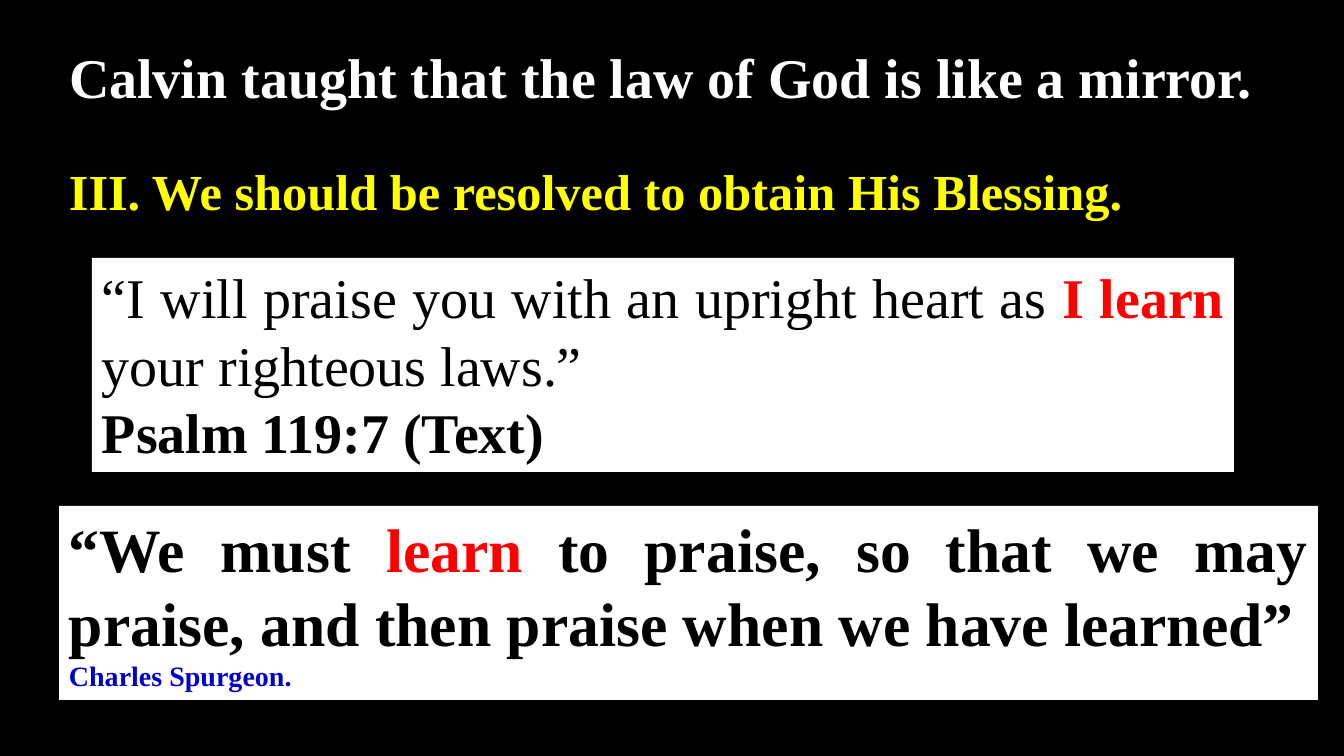
from dataclasses import dataclass

from pptx import Presentation
from pptx.dml.color import RGBColor
from pptx.enum.shapes import MSO_SHAPE
from pptx.enum.text import MSO_ANCHOR, MSO_AUTO_SIZE, PP_ALIGN
from pptx.util import Pt

RECT = MSO_SHAPE.RECTANGLE
TOP = MSO_ANCHOR.TOP
FIXED = MSO_AUTO_SIZE.NONE
LEFT, JUSTIFY = PP_ALIGN.LEFT, PP_ALIGN.JUSTIFY
SCALE = 914400 / 100.8


@dataclass(frozen=True)
class Theme:
    font: str = "Times New Roman"
    black: str = "000000"
    white: str = "FFFFFF"
    yellow: str = "FFFF00"
    red: str = "FF0000"
    blue: str = "0000CC"
    title: int = 40
    point: int = 36
    verse: int = 40
    quote: int = 44
    credit: int = 20


THEME = Theme()


def px(*sizes):
    return [round(size * SCALE) for size in sizes]


def paint(fill, color):
    fill.solid()
    fill.fore_color.rgb = RGBColor.from_string(color)


def write(shape, lines, align, wrap):
    """Fill a shape with lines, each a list of (text, size, color, bold)."""
    frame = shape.text_frame
    look = {"word_wrap": wrap, "auto_size": FIXED, "vertical_anchor": TOP}
    for name, value in look.items():
        setattr(frame, name, value)
    for index, line in enumerate(lines):
        para = frame.add_paragraph() if index else frame.paragraphs[0]
        para.alignment = align
        for text, size, color, bold in line:
            run = para.add_run()
            run.text = text
            form = {"name": THEME.font, "size": Pt(size), "bold": bold}
            for name, value in form.items():
                setattr(run.font, name, value)
            run.font.color.rgb = RGBColor.from_string(color)


def add_title(slide, box, text):
    title = slide.shapes.title
    for name, value in zip(("left", "top", "width", "height"), px(*box)):
        setattr(title, name, value)
    write(title, [[(text, THEME.title, THEME.white, True)]], LEFT, False)


def add_point(slide, box, text):
    point = slide.shapes.add_textbox(*px(*box))
    write(point, [[(text, THEME.point, THEME.yellow, True)]], LEFT, False)


def add_panel(slide, box, lines):
    panel = slide.shapes.add_shape(RECT, *px(*box))
    panel.shadow.inherit = False
    paint(panel.fill, THEME.white)
    panel.line.fill.background()
    write(panel, lines, JUSTIFY, True)


def build_slide(deck):
    slide = deck.slides.add_slide(deck.slide_layouts[5])
    paint(slide.background.fill, THEME.black)
    add_title(slide, (59, 37, 1208, 78),
              "Calvin taught that the law of God is like a mirror.")
    add_point(slide, (59, 155, 1124, 72),
              "III. We should be resolved to obtain His Blessing.")

    size = THEME.verse
    add_panel(slide, (92, 258, 1142, 214), [
        [("“I will praise you with an upright heart as ",
          size, THEME.black, False),
         ("I learn ", size, THEME.red, True),
         ("your righteous laws.”", size, THEME.black, False)],
        [("Psalm 119:7 (Text)", size, THEME.black, True)],
    ])

    size = THEME.quote
    add_panel(slide, (59, 506, 1259, 194), [
        [("“We must ", size, THEME.black, True),
         ("learn", size, THEME.red, True),
         (" to praise, so that we may praise, "
          "and then praise when we have learned”",
          size, THEME.black, True)],
        [("Charles Spurgeon.", THEME.credit, THEME.blue, True)],
    ])


def main():
    deck = Presentation()
    deck.slide_width, deck.slide_height = px(1344, 756)
    build_slide(deck)
    deck.save("out.pptx")


if __name__ == "__main__":
    main()
